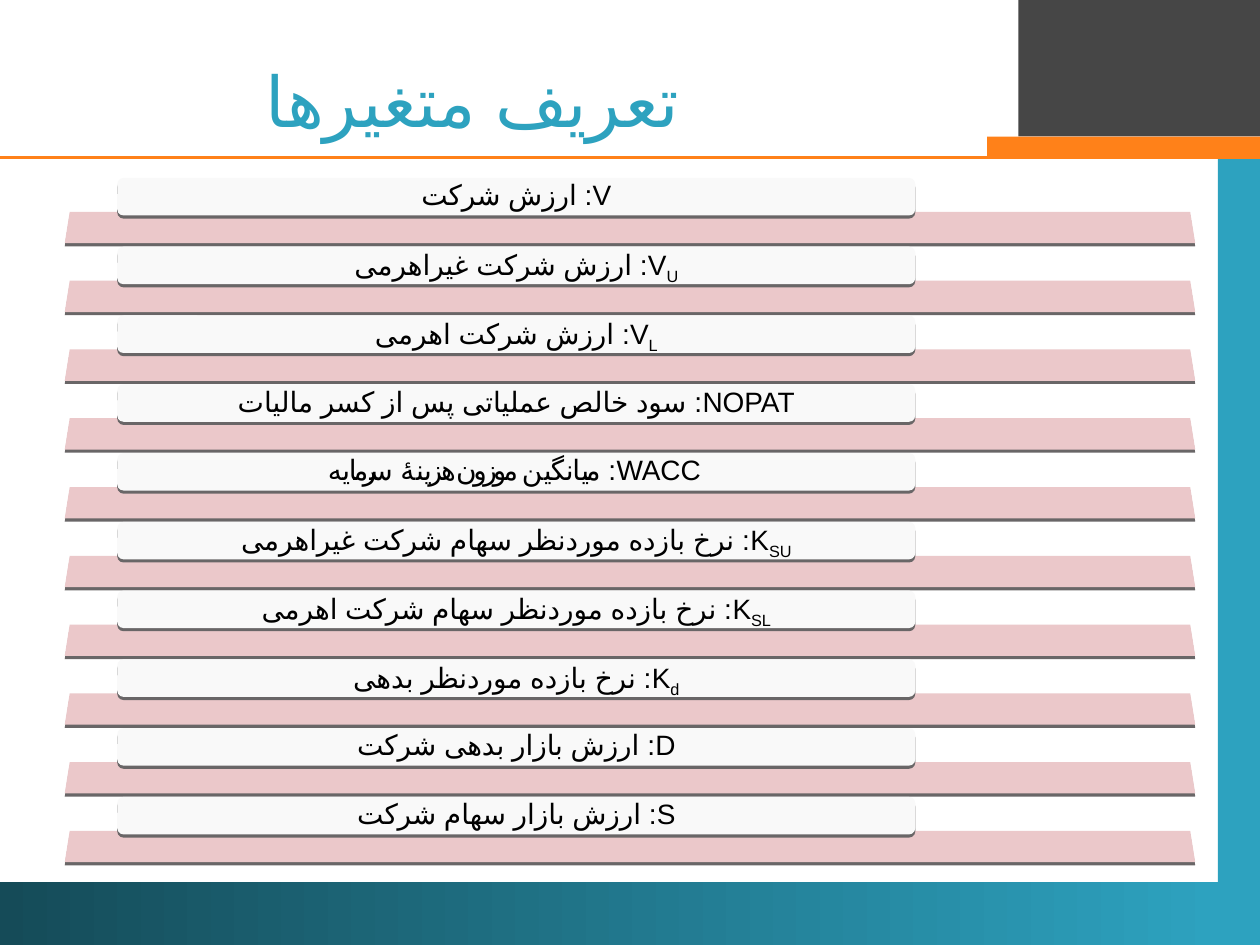
from dataclasses import dataclass

from lxml import etree
from pptx import Presentation
from pptx.dml.color import RGBColor
from pptx.enum import shapes, text
from pptx.oxml import ns
from pptx.util import Pt


@dataclass(frozen=True)
class Theme:
    font: str = "Arial"
    head: int = 40
    body: int = 16
    teal: str = "2DA2BF"
    deep: str = "154B58"
    dark: str = "464646"
    orange: str = "FF8119"
    rose: str = "EBC8CA"
    pale: str = "F9F9F9"
    edge: str = "696667"
    ink: str = "000000"


THEME = Theme()
KIND = shapes.MSO_SHAPE
TERMS = [
    ("V", "", ": ارزش شرکت"),
    ("V", "U", ": ارزش شرکت غیراهرمی"),
    ("V", "L", ": ارزش شرکت اهرمی"),
    ("NOPAT", "", ": سود خالص عملیاتی پس از کسر مالیات"),
    ("WACC", "", ": میانگین موزون هزینۀ سرمایه"),
    ("K", "SU", ": نرخ بازده موردنظر سهام شرکت غیراهرمی"),
    ("K", "SL", ": نرخ بازده موردنظر سهام شرکت اهرمی"),
    ("K", "d", ": نرخ بازده موردنظر بدهی"),
    ("D", "", ": ارزش بازار بدهی شرکت"),
    ("S", "", ": ارزش بازار سهام شرکت"),
]


def rgb(code):
    return RGBColor.from_string(code)


def place(item, box):
    item.left, item.top, item.width, item.height = map(Pt, box)


def write(item, parts, size, color, inset=(0, 0), space=1.0):
    frame = item.text_frame
    frame.word_wrap = True
    frame.auto_size = text.MSO_AUTO_SIZE.NONE
    frame.vertical_anchor = text.MSO_ANCHOR.MIDDLE
    frame.margin_left = frame.margin_right = Pt(inset[0])
    frame.margin_top = frame.margin_bottom = Pt(inset[1])
    para = frame.paragraphs[0]
    para.alignment = text.PP_ALIGN.CENTER
    para.line_spacing = space
    para._p.get_or_add_pPr().set("rtl", "1")
    for words, base in parts:
        run = para.add_run()
        run.text = words
        run.font.size = Pt(size)
        run.font.bold = False
        run.font.color.rgb = rgb(color)
        run.font.name = THEME.font
        props = run._r.get_or_add_rPr()
        props.set("lang", "fa-IR")
        etree.SubElement(props, ns.qn("a:cs"), typeface=THEME.font)
        if base:
            props.set("baseline", str(base * 1000))


def block(slide, kind, box, color, edge=None):
    item = slide.shapes.add_shape(kind, *map(Pt, box))
    item.shadow.inherit = False
    item.fill.solid()
    item.fill.fore_color.rgb = rgb(color)
    item.line.fill.background()
    if edge:
        effects = item._element.spPr.find(ns.qn("a:effectLst"))
        cast = etree.SubElement(
            effects, ns.qn("a:outerShdw"), blurRad="0", dist=str(Pt(1.8)),
            dir="5400000", algn="ctr", rotWithShape="0")
        etree.SubElement(cast, ns.qn("a:srgbClr"), val=edge)
    return item


def frame(slide, box):
    x, y, w, h = box
    side, foot, rule = 24, 36, 90
    block(slide, KIND.RECTANGLE, (x + w - side, y + rule, side, h - rule), THEME.teal)
    strip = block(slide, KIND.RECTANGLE, (x, y + h - foot, w - side, foot), THEME.teal)
    strip.fill.gradient()
    strip.fill.gradient_angle = 0
    for stop, color in zip(strip.fill.gradient_stops, (THEME.deep, THEME.teal)):
        stop.color.rgb = rgb(color)
    block(slide, KIND.RECTANGLE, (x + w - 138, y, 138, 78), THEME.dark)
    line = slide.shapes.add_connector(
        shapes.MSO_CONNECTOR.STRAIGHT, Pt(x + w), Pt(y + rule), Pt(x), Pt(y + rule))
    line.line.color.rgb = rgb(THEME.orange)
    line.line.width = Pt(2.25)
    etree.SubElement(line._element.spPr, ns.qn("a:effectLst"))
    block(slide, KIND.RECTANGLE, (x + w - 156, y + 78, 156, 12), THEME.orange)


def heading(slide, box):
    title = slide.shapes.title
    place(title, box)
    write(title, [("تعریف متغیرها", 0)], THEME.head, THEME.teal)


def term(slide, box, parts):
    x, y, w, h = box
    bar = block(slide, KIND.TRAPEZOID, (x, y + h - 17.9, w, 17.9), THEME.rose, THEME.edge)
    bar.adjustments[0] = 0.16
    pill = block(slide, KIND.ROUNDED_RECTANGLE, (x + 30, y, 456, 21.4), THEME.pale, THEME.edge)
    name, sub, rest = parts
    runs = [(name, 0), (sub, -25), (rest, 0)] if sub else [(name + rest, 0)]
    write(pill, runs, THEME.body, THEME.ink, inset=(18.5, 1.4), space=0.9)


def listing(slide, box):
    x, y, w, h = box
    tall = 37.3
    step = (h - tall) / (len(TERMS) - 1)
    for i, parts in enumerate(TERMS):
        term(slide, (x, y + i * step, w, tall), parts)


def main():
    deck = Presentation()
    deck.slide_width, deck.slide_height = Pt(720), Pt(540)
    slide = deck.slides.add_slide(deck.slide_layouts[5])
    frame(slide, (0, 0, 720, 540))
    heading(slide, (0, 36, 540, 42))
    listing(slide, (37, 101.7, 646, 391))
    deck.save("out.pptx")


if __name__ == "__main__":
    main()
